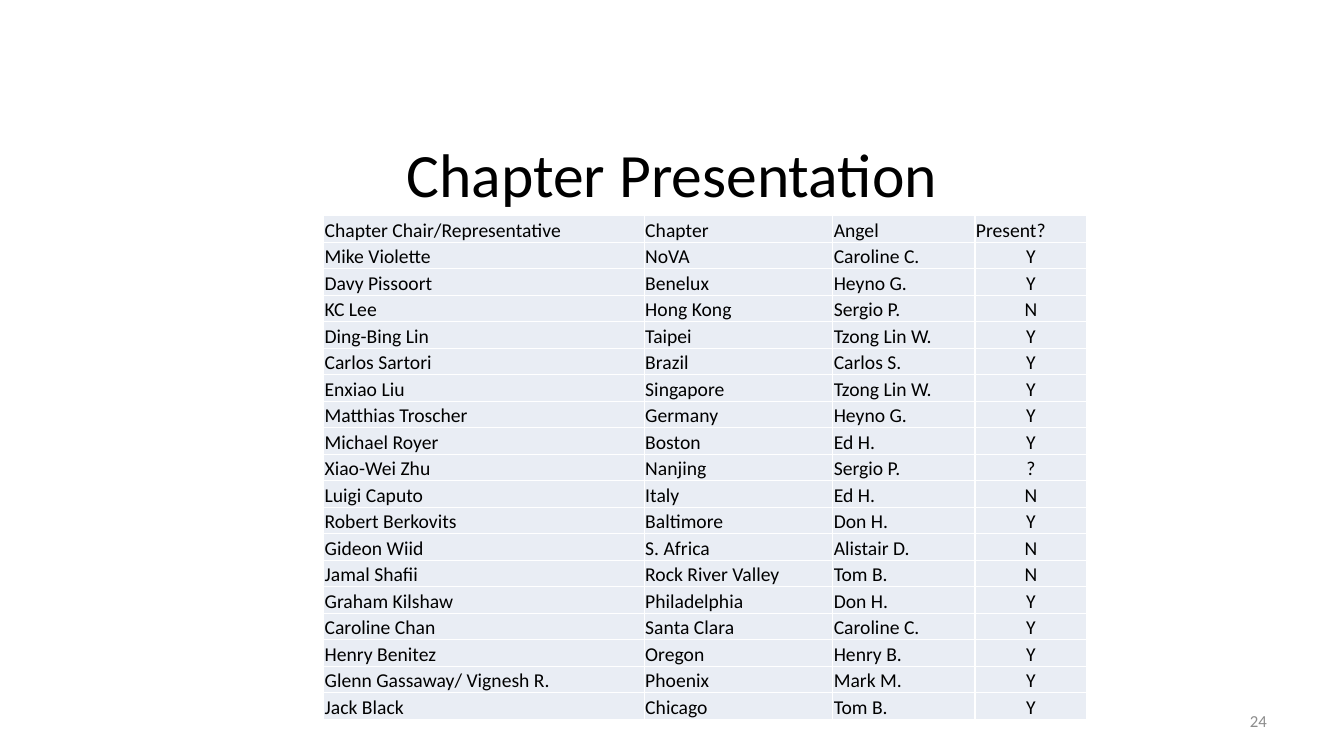
from lxml import etree
from pptx import Presentation
from pptx.dml.color import RGBColor
from pptx.enum.text import MSO_ANCHOR as Anchor, PP_ALIGN as Align
from pptx.oxml.ns import qn
from pptx.util import Inches, Pt

TITLE = "Chapter Presentation"
PAGE_NUMBER = "24"
HEADER = ("Chapter Chair/Representative", "Chapter", "Angel", "Present?")
CHAPTERS = [
    ("Mike Violette", "NoVA", "Caroline C.", "Y"),
    ("Davy Pissoort", "Benelux", "Heyno G.", "Y"),
    ("KC Lee", "Hong Kong", "Sergio P.", "N"),
    ("Ding-Bing Lin", "Taipei", "Tzong Lin W.", "Y"),
    ("Carlos Sartori", "Brazil", "Carlos S.", "Y"),
    ("Enxiao Liu", "Singapore", "Tzong Lin W.", "Y"),
    ("Matthias Troscher", "Germany", "Heyno G.", "Y"),
    ("Michael Royer", "Boston", "Ed H.", "Y"),
    ("Xiao-Wei Zhu", "Nanjing", "Sergio P.", "?"),
    ("Luigi Caputo", "Italy", "Ed H.", "N"),
    ("Robert Berkovits", "Baltimore", "Don H.", "Y"),
    ("Gideon Wiid", "S. Africa", "Alistair D.", "N"),
    ("Jamal Shafii", "Rock River Valley", "Tom B.", "N"),
    ("Graham Kilshaw", "Philadelphia", "Don H.", "Y"),
    ("Caroline Chan", "Santa Clara", "Caroline C.", "Y"),
    ("Henry Benitez", "Oregon", "Henry B.", "Y"),
    ("Glenn Gassaway/ Vignesh R.", "Phoenix", "Mark M.", "Y"),
    ("Jack Black", "Chicago", "Tom B.", "Y"),
]

FONT = "Calibri"
BLACK, GREY, WHITE, PALE_BLUE = "000000", "8C8C8C", "FFFFFF", "E9EDF4"
SLIDE_WIDTH, SLIDE_HEIGHT = 13.33, 7.5
MARGIN = SLIDE_WIDTH / 20
TABLE_LEFT, TABLE_TOP, TABLE_HEIGHT = 3.21, 2.14, 5
COLUMN_WIDTHS = (3.18, 1.87, 1.41, 1.11)
CELL_INSET = Inches(0.01)


def color(hex_value):
    return RGBColor.from_string(hex_value)


def write(frame, text, size, hex_value, align):
    para = frame.paragraphs[0]
    para.alignment = align
    span = para.add_run()
    span.text = text
    span.font.name = FONT
    span.font.size = Pt(size)
    span.font.color.rgb = color(hex_value)


def add_text(page, area, text, size, hex_value, align):
    box = page.shapes.add_textbox(*(Inches(length) for length in area))
    frame = box.text_frame
    frame.word_wrap = True
    frame.vertical_anchor = Anchor.MIDDLE
    write(frame, text, size, hex_value, align)


def add_borders(cell, hex_value, points):
    """Line all four sides; the lines must precede the fill in the cell's XML."""
    properties = cell._tc.get_or_add_tcPr()
    for index, side in enumerate(("lnL", "lnR", "lnT", "lnB")):
        line = etree.Element(qn(f"a:{side}"), w=str(Pt(points)))
        fill = etree.SubElement(line, qn("a:solidFill"))
        etree.SubElement(fill, qn("a:srgbClr"), val=hex_value)
        properties.insert(index, line)


def format_cell(cell, text, align):
    cell.margin_left = cell.margin_right = cell.margin_top = CELL_INSET
    cell.margin_bottom = 0
    cell.vertical_anchor = Anchor.BOTTOM
    cell.fill.solid()
    cell.fill.fore_color.rgb = color(PALE_BLUE)
    add_borders(cell, WHITE, 1)
    write(cell.text_frame, text, 14, BLACK, align)


def add_chapter_table(page):
    rows = [HEADER, *CHAPTERS]
    table = page.shapes.add_table(
        len(rows), len(HEADER), Inches(TABLE_LEFT), Inches(TABLE_TOP),
        Inches(sum(COLUMN_WIDTHS)), Inches(TABLE_HEIGHT)).table
    table.first_row = table.horz_banding = False
    for column, width in zip(table.columns, COLUMN_WIDTHS):
        column.width = Inches(width)
    for row_index, values in enumerate(rows):
        table.rows[row_index].height = Inches(TABLE_HEIGHT / len(rows))
        for column_index, text in enumerate(values):
            is_answer = row_index > 0 and column_index == len(HEADER) - 1
            format_cell(table.cell(row_index, column_index), text,
                        Align.CENTER if is_answer else Align.LEFT)


def main():
    deck = Presentation()
    deck.slide_width, deck.slide_height = Inches(SLIDE_WIDTH), Inches(SLIDE_HEIGHT)
    page = deck.slides.add_slide(deck.slide_layouts[6])
    content_width = SLIDE_WIDTH - 2 * MARGIN
    add_text(page, (MARGIN, 1.09, content_width, SLIDE_HEIGHT / 6),
             TITLE, 44, BLACK, Align.CENTER)
    add_chapter_table(page)
    number_width = 3.11
    add_text(page, (SLIDE_WIDTH - MARGIN - number_width, 6.95, number_width, 0.4),
             PAGE_NUMBER, 12, GREY, Align.RIGHT)
    deck.save("out.pptx")


if __name__ == "__main__":
    main()
